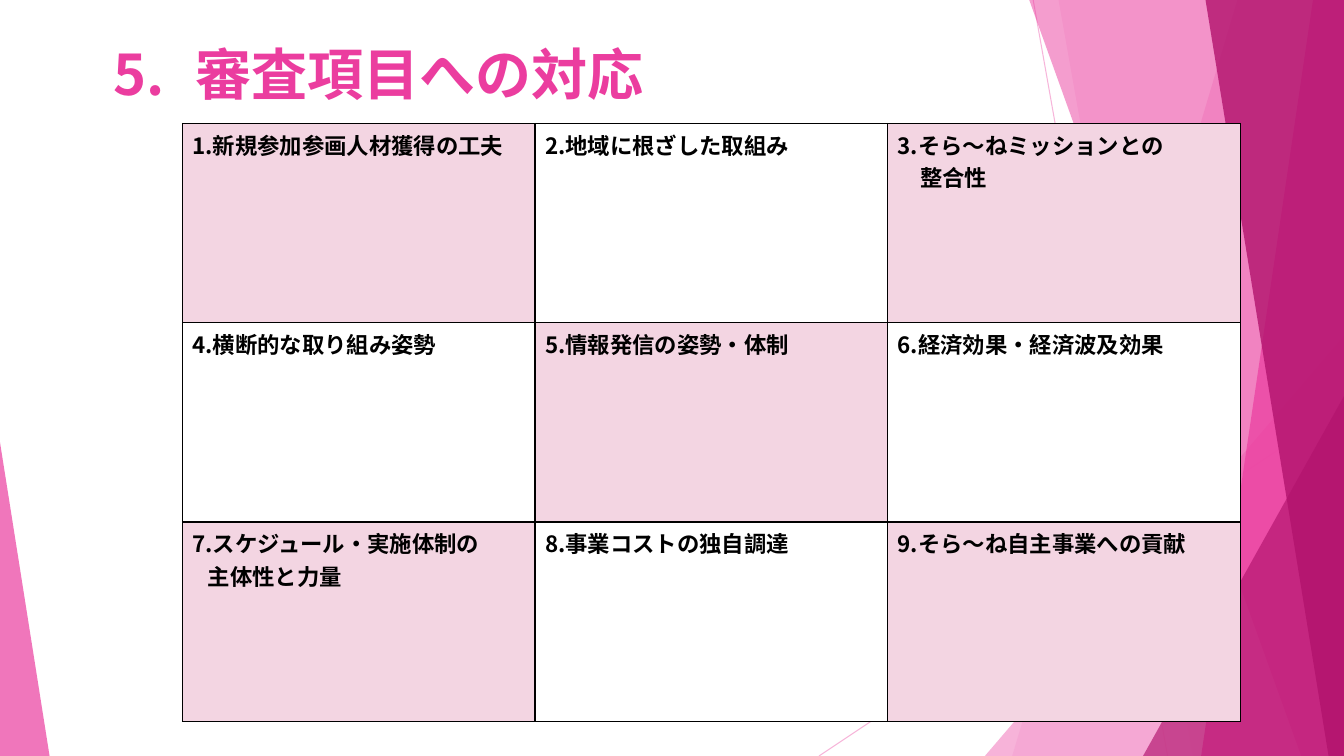
from dataclasses import dataclass

from lxml import etree
from pptx import Presentation
from pptx.dml.color import RGBColor
from pptx.enum import shapes, text
from pptx.oxml import ns
from pptx.util import Pt


@dataclass(frozen=True)
class Theme:
    """Colours, font and type sizes of the slide."""
    pale: str = "F496CB"
    pink: str = "EB3D9F"
    deep: str = "B2136D"
    tint: str = "F3D5E2"
    white: str = "FFFFFF"
    ink: str = "000000"
    font: str = "Noto Sans CJK JP"
    head: int = 40
    body: int = 16


THEME = Theme()
WIDE, HIGH = 960, 540
TITLE = "審査項目への対応"
ITEMS = [
    ["1.新規参加参画人材獲得の工夫"],
    ["2.地域に根ざした取組み"],
    ["3.そら～ねミッションとの", "整合性"],
    ["4.横断的な取り組み姿勢"],
    ["5.情報発信の姿勢・体制"],
    ["6.経済効果・経済波及効果"],
    ["7.スケジュール・実施体制の", "主体性と力量"],
    ["8.事業コストの独自調達"],
    ["9.そら～ね自主事業への貢献"],
]
INDENTS = {2: 16, 6: 11}


def child(node, tag, **attrs):
    """Append an XML element and return it."""
    return etree.SubElement(node, ns.qn(tag), attrs)


def fade(shape, alpha):
    """Set the opacity, in percent, of every colour in a shape."""
    for color in shape._element.spPr.iter(ns.qn("a:srgbClr")):
        child(color, "a:alpha", val=str(alpha * 1000))


def paint(shape, color, alpha):
    """Give a shape a plain see-through fill and no outline."""
    shape.shadow.inherit = False
    shape.fill.solid()
    shape.fill.fore_color.rgb = RGBColor.from_string(color)
    shape.line.fill.background()
    fade(shape, alpha)


def add_ray(slide, start, end):
    """Draw a thin pale line."""
    ray = slide.shapes.add_connector(
        shapes.MSO_CONNECTOR.STRAIGHT, *map(Pt, start + end))
    ray.line.color.rgb = RGBColor.from_string(THEME.pale)
    ray.line.width = Pt(0.75)
    fade(ray, 70)
    child(ray._element.spPr, "a:effectLst")


def add_facet(slide, top, foot, color, alpha):
    """Fill from a slanted edge to the right side of the slide."""
    form = slide.shapes.build_freeform(Pt(top), Pt(-0.6))
    form.add_line_segments(
        [(Pt(x), Pt(y)) for x, y in [(WIDE, -0.6), (WIDE, HIGH), (foot, HIGH)]])
    paint(form.convert_to_shape(), color, alpha)


def add_wedge(slide, left, top, width, tip, color, alpha):
    """Draw a right triangle standing on the bottom edge."""
    wedge = slide.shapes.add_shape(
        shapes.MSO_SHAPE.ISOSCELES_TRIANGLE,
        Pt(left), Pt(top), Pt(width), Pt(HIGH - top))
    wedge.adjustments[0] = tip
    paint(wedge, color, alpha)


def add_decor(slide):
    """Draw the faceted backdrop from back to front."""
    add_ray(slide, (738, 0), (834, HIGH))
    add_ray(slide, (WIDE, 290), (585, HIGH))
    add_facet(slide, 884, 723, THEME.pale, 36)
    add_facet(slide, 756, 852, THEME.pale, 20)
    add_wedge(slide, 703.5, 240, 256.5, 1, THEME.pale, 72)
    add_facet(slide, 735, 929.5, THEME.pink, 50)
    add_facet(slide, 938, 858, THEME.pink, 70)
    add_facet(slide, 861, 949, THEME.deep, 80)
    add_wedge(slide, 816.5, 283, 143.5, 1, THEME.deep, 66)
    add_wedge(slide, 0, 316, 35.4, 0, THEME.pink, 70)


def style(para, size, color):
    """Format the runs of a paragraph as bold text."""
    para.alignment = text.PP_ALIGN.LEFT
    for run in para.runs:
        run.font.size = Pt(size)
        run.font.bold = True
        run.font.color.rgb = RGBColor.from_string(color)
        run.font.name = THEME.font
        child(run.font._element, "a:ea", typeface=THEME.font)


def set_title(slide):
    """Place the numbered title above the backdrop."""
    title = slide.shapes.title
    title.left, title.top = Pt(74), Pt(24.5)
    title.width, title.height = Pt(677), Pt(104)
    frame = title.text_frame
    frame.text = TITLE
    frame.auto_size = text.MSO_AUTO_SIZE.NONE
    frame.vertical_anchor = text.MSO_ANCHOR.TOP
    para = frame.paragraphs[0]
    style(para, THEME.head, THEME.pink)
    props = para._p.get_or_add_pPr()
    props.set("marL", str(Pt(58.5)))
    props.set("indent", str(Pt(-58.5)))
    child(child(props, "a:buClr"), "a:srgbClr", val=THEME.pink)
    child(props, "a:buFont", typeface=THEME.font)
    child(props, "a:buAutoNum", type="arabicPeriod", startAt="5")
    slide.shapes._spTree.append(title._element)


def set_cell(cell, lines, color, indent):
    """Fill one bordered cell with its lines of text."""
    props = cell._tc.get_or_add_tcPr()
    for side in "LRTB":
        edge = child(props, f"a:ln{side}", w=str(Pt(1)))
        child(child(edge, "a:solidFill"), "a:srgbClr", val=THEME.ink)
    cell.fill.solid()
    cell.fill.fore_color.rgb = RGBColor.from_string(color)
    cell.text_frame.text = "\n".join(lines)
    for row, para in enumerate(cell.text_frame.paragraphs):
        style(para, THEME.body, THEME.ink)
        if row:
            para._p.get_or_add_pPr().set("marL", str(Pt(indent)))


def add_grid(slide):
    """Add the three by three table with a checkered fill."""
    table = slide.shapes.add_table(
        3, 3, Pt(130.3), Pt(88.2), Pt(755.7), Pt(427)).table
    table.first_row = table.horz_banding = False
    for i, lines in enumerate(ITEMS):
        color = THEME.white if i % 2 else THEME.tint
        set_cell(table.cell(*divmod(i, 3)), lines, color, INDENTS.get(i, 0))


def main():
    """Build and save the slide."""
    deck = Presentation()
    deck.slide_width, deck.slide_height = Pt(WIDE), Pt(HIGH)
    slide = deck.slides.add_slide(deck.slide_layouts[5])
    add_decor(slide)
    set_title(slide)
    add_grid(slide)
    deck.save("out.pptx")


if __name__ == "__main__":
    main()
